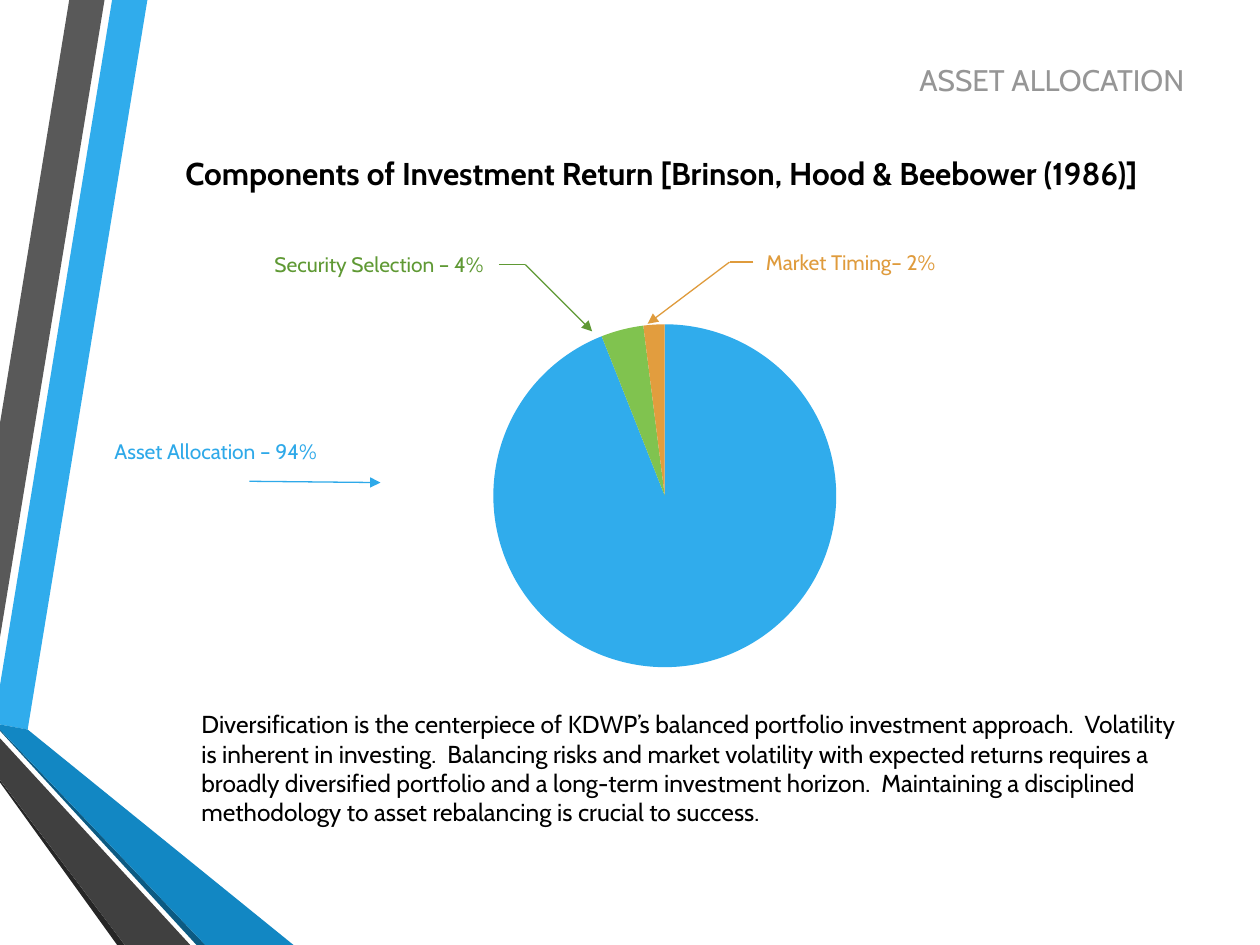
from dataclasses import dataclass

from lxml.etree import SubElement
from pptx import Presentation
from pptx.chart.data import CategoryChartData
from pptx.dml.color import RGBColor
from pptx.enum.chart import XL_CHART_TYPE
from pptx.enum.shapes import MSO_CONNECTOR
from pptx.enum.text import MSO_AUTO_SIZE, PP_ALIGN
from pptx.oxml import parse_xml
from pptx.oxml.ns import nsdecls, qn
from pptx.util import Inches, Pt


@dataclass(frozen=True)
class Theme:
    """Colours, font and type sizes of the slide."""

    font: str = "Cabin"
    ink: str = "000000"
    muted: str = "969696"
    blue: str = "30ACEC"
    blue_mid: str = "1287C3"
    blue_deep: str = "0C5A82"
    grey: str = "595959"
    grey_mid: str = "404040"
    grey_deep: str = "262626"
    green: str = "80C34F"
    orange: str = "E29D3E"
    blue_label: str = "2EA9E9"
    green_label: str = "5F9934"
    orange_label: str = "DF9B3C"
    heading: int = 18
    section: int = 17
    body: int = 14
    label: int = 12
    rule: float = 0.75


THEME = Theme()
LEFT_SIDE, RIGHT_SIDE = 1, 3
RIBBONS = [
    (THEME.blue, [(0, 5.44), (0, 5.75), (0.22, 5.79), (1.17, 0), (0.89, 0)]),
    (THEME.grey, [(0.83, 0), (0.55, 0), (0, 3.36), (0, 5.06)]),
    (THEME.grey_deep, [(0, 6.19), (0, 6.21), (0.93, 7.5), (0.99, 7.5)]),
    (THEME.blue_deep, [(0, 5.79), (0, 5.8), (1.56, 7.5), (1.63, 7.5)]),
    (THEME.blue_mid, [(0, 5.79), (1.63, 7.5), (2.33, 7.5), (0.22, 5.79), (0, 5.75)]),
    (THEME.grey_mid, [(0, 6.19), (0.99, 7.5), (1.51, 7.5), (0, 5.86)]),
]
COMMENTARY = (
    "Diversification is the centerpiece of KDWP’s balanced portfolio investment "
    "approach.  Volatility is inherent in investing.  Balancing risks and market "
    "volatility with expected returns requires a broadly diversified portfolio and "
    "a long-term investment horizon.  Maintaining a disciplined methodology to "
    "asset rebalancing is crucial to success."
)


def add_text(slide, box, text, *, size, color=THEME.ink, bold=False, align=PP_ALIGN.LEFT):
    """Place one wrapped paragraph in a box given in inches."""
    holder = slide.shapes.add_textbox(*map(Inches, box))
    frame = holder.text_frame
    frame.word_wrap = True
    frame.auto_size = MSO_AUTO_SIZE.SHAPE_TO_FIT_TEXT
    paragraph = frame.paragraphs[0]
    paragraph.alignment = align
    run = paragraph.add_run()
    run.text = text
    run.font.name = THEME.font
    run.font.size = Pt(size)
    run.font.bold = bold
    run.font.color.rgb = RGBColor.from_string(color)
    return holder


def add_ribbons(slide, left, top):
    """Draw the folded ribbons along the left edge."""
    for color, outline in RIBBONS:
        points = [(Inches(left + x), Inches(top + y)) for x, y in outline]
        builder = slide.shapes.build_freeform(*points[0])
        builder.add_line_segments(points[1:], close=True)
        ribbon = builder.convert_to_shape()
        ribbon.shadow.inherit = False
        ribbon.fill.solid()
        ribbon.fill.fore_color.rgb = RGBColor.from_string(color)
        ribbon.line.fill.background()


def add_return_pie(slide, box):
    """Chart the three components of investment return."""
    components = CategoryChartData()
    components.categories = ["1", "2", "3"]
    components.add_series("Series 1", (94, 4, 2))
    chart = slide.shapes.add_chart(
        XL_CHART_TYPE.PIE, *map(Inches, box), components
    ).chart
    chart.has_legend = False
    chart.has_title = False
    chart.font.name = THEME.font
    chart.font.size = Pt(THEME.heading)
    chart.font.color.rgb = RGBColor.from_string(THEME.ink)
    pie = chart.plots[0]
    pie.vary_by_categories = False
    for index, color in enumerate((THEME.blue, THEME.green, THEME.orange)):
        wedge = pie.series[0].points[index].format
        wedge.fill.solid()
        wedge.fill.fore_color.rgb = RGBColor.from_string(color)
        wedge.line.fill.background()
    center_pie(chart, diameter=2.72, width=box[2], height=box[3])


def center_pie(chart, diameter, width, height):
    """Fix the pie's diameter in the middle of the chart."""
    w, h = diameter / width, diameter / height
    places = {"x": (1 - w) / 2, "y": (1 - h) / 2, "w": w, "h": h}
    settings = "".join(f'<c:{key} val="{value:.2f}"/>' for key, value in places.items())
    layout = parse_xml(
        f'<c:layout {nsdecls("c")}><c:manualLayout><c:layoutTarget val="inner"/>'
        f'<c:xMode val="edge"/><c:yMode val="edge"/>{settings}'
        "</c:manualLayout></c:layout>"
    )
    plot_area = chart.plots[0]._element.getparent()
    for automatic in plot_area.findall(qn("c:layout")):
        plot_area.remove(automatic)
    plot_area.insert(0, layout)


def add_leader(slide, start, end, color, arrow):
    """Draw one straight piece of a leader, with an optional arrowhead."""
    leader = slide.shapes.add_connector(
        MSO_CONNECTOR.STRAIGHT, *map(Inches, (*start, *end))
    )
    leader.line.color.rgb = RGBColor.from_string(color)
    leader.line.width = Pt(THEME.rule)
    if arrow:
        SubElement(leader.line._get_or_add_ln(), qn("a:tailEnd"), type="triangle")
    SubElement(leader._element.spPr, qn("a:effectLst"))
    return leader


def add_callout(slide, left, top, text, color, route, side=None):
    """Label a wedge and lead an arrow along the route to it."""
    label = add_text(
        slide, (left, top, 1.88, 0.3), text, size=THEME.label, color=color
    )
    pieces = list(zip(route, route[1:]))
    leaders = [
        add_leader(slide, start, end, color, arrow=number == len(pieces))
        for number, (start, end) in enumerate(pieces, 1)
    ]
    if side is not None:
        leaders[0].begin_connect(label, side)


def build_slide(slide):
    """Compose the asset allocation slide."""
    add_ribbons(slide, 0, 0)
    add_return_pie(slide, (2.08, 2.42, 6.33, 3))
    add_text(slide, (1.5, 5.58, 8, 1.04), COMMENTARY, size=THEME.body)
    add_text(
        slide, (0, 1.17, 10.5, 0.4),
        "Components of Investment Return [Brinson, Hood & Beebower (1986)]",
        size=THEME.heading, bold=True, align=PP_ALIGN.CENTER,
    )
    add_text(
        slide, (1.23, 0.44, 8.27, 0.39), "ASSET ALLOCATION",
        size=THEME.section, color=THEME.muted, align=PP_ALIGN.RIGHT,
    )
    add_callout(
        slide, 2.08, 1.95, "Security Selection – 4%", THEME.green_label,
        [(3.96, 2.1), (4.17, 2.1), (4.7, 2.63)], RIGHT_SIDE,
    )
    add_callout(
        slide, 5.98, 1.93, "Market Timing– 2%", THEME.orange_label,
        [(5.98, 2.08), (5.79, 2.08), (5.14, 2.57)], LEFT_SIDE,
    )
    add_callout(
        slide, 0.81, 3.43, "Asset Allocation – 94%", THEME.blue_label,
        [(1.98, 3.82), (3.02, 3.83)],
    )


def main():
    """Create and save the presentation."""
    deck = Presentation()
    deck.slide_width, deck.slide_height = Inches(10), Inches(7.5)
    build_slide(deck.slides.add_slide(deck.slide_layouts[6]))
    deck.save("out.pptx")


if __name__ == "__main__":
    main()
